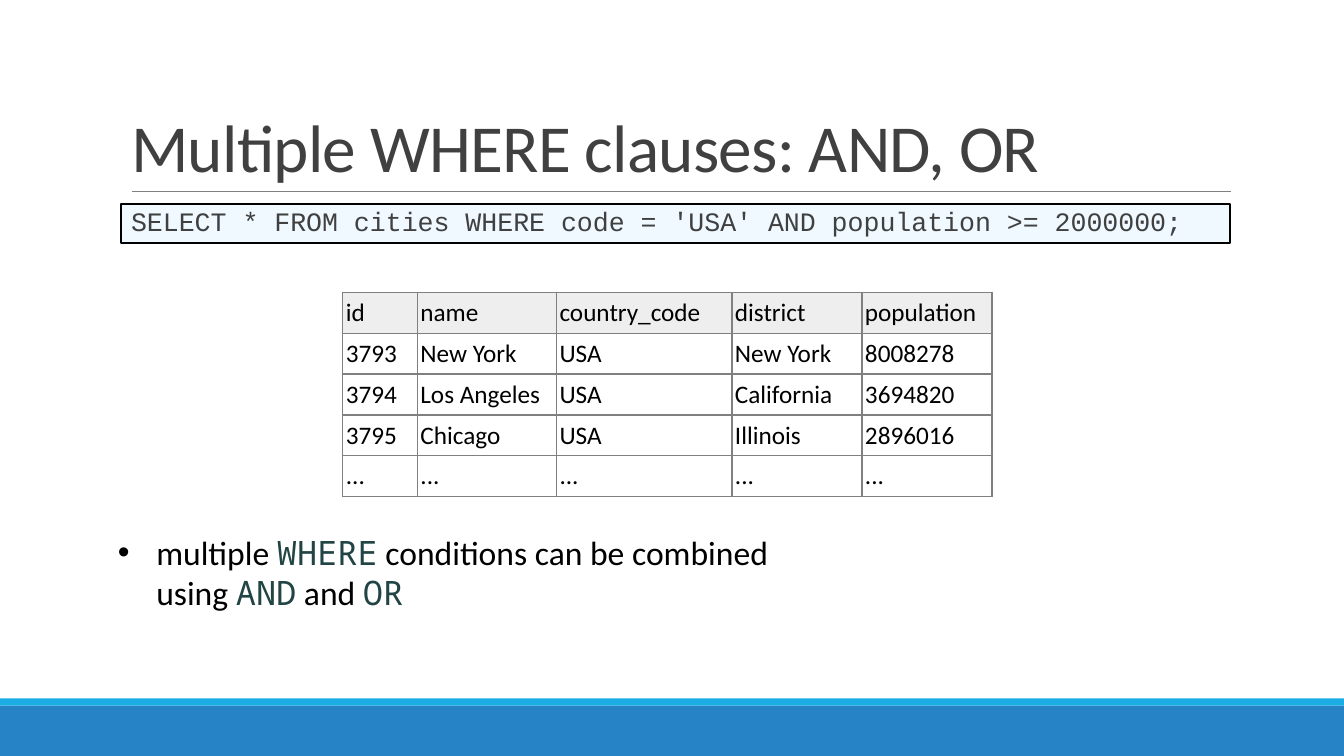
import pptx
import pptx.dml.color
import pptx.enum.shapes
import pptx.enum.text
import pptx.oxml
import pptx.oxml.ns
import pptx.util

PX = 9144  # EMU in one px, 100 px to the inch
ANCHOR = pptx.enum.text.MSO_ANCHOR

COLORS = {
    "band": "2683C6", "stripe": "1CADE4", "rule": "808080",
    "title": "404040", "code_fill": "EFF9FF", "black": "000000",
    "header": "EEEEEE", "white": "FFFFFF", "keyword": "224444",
}

CITIES = [
    ["id", "name", "country_code", "district", "population"],
    ["3793", "New York", "USA", "New York", "8008278"],
    ["3794", "Los Angeles", "USA", "California", "3694820"],
    ["3795", "Chicago", "USA", "Illinois", "2896016"],
    ["..."] * 5,
]
COLUMN_WIDTHS = [74, 138, 174, 129, 129]
ROW_HEIGHT = 40


def px(length):
    return pptx.util.Emu(length * PX)


def rgb(name):
    return pptx.dml.color.RGBColor.from_string(COLORS[name])


def paint(item, color):
    item.fill.solid()
    item.fill.fore_color.rgb = rgb(color)


def add_xml(parent, xml):
    declared = xml.replace(" ", f" {pptx.oxml.ns.nsdecls('a')} ", 1)
    parent.append(pptx.oxml.parse_xml(declared))


def add_span(para, text, *, size, font="Calibri", color="black", spacing=None):
    span = para.add_run()
    span.text = text
    span.font.size = pptx.util.Pt(size)
    span.font.name = font
    span.font.color.rgb = rgb(color)
    if spacing is not None:
        span.font._element.set("spc", str(round(spacing * 100)))


def set_margins(item, left, top, right, bottom):
    item.margin_left, item.margin_top = px(left), px(top)
    item.margin_right, item.margin_bottom = px(right), px(bottom)


def place_text(box, at, margins, anchor, line_spacing):
    """Move a placeholder, set up its frame and return its paragraph."""
    box.left, box.top, box.width, box.height = map(px, at)
    frame = box.text_frame
    frame.word_wrap = True
    frame.auto_size = pptx.enum.text.MSO_AUTO_SIZE.NONE
    frame.vertical_anchor = anchor
    set_margins(frame, *margins)
    para = frame.paragraphs[0]
    para.alignment = pptx.enum.text.PP_ALIGN.LEFT
    para.line_spacing = line_spacing
    para.space_before = pptx.util.Pt(0)
    return para


def set_bullet(para, margin, indent, mark):
    props = para._p.get_or_add_pPr()
    props.set("marL", str(margin * PX))
    props.set("indent", str(indent * PX))
    add_xml(props, f'<a:buChar char="{mark}"/>' if mark else "<a:buNone />")


def add_bar(page, at, color):
    bar = page.shapes.add_shape(
        pptx.enum.shapes.MSO_SHAPE.RECTANGLE, *map(px, at))
    bar.shadow.inherit = False
    paint(bar, color)
    bar.line.fill.background()


def add_rule(page, left, right, top):
    rule = page.shapes.add_connector(
        pptx.enum.shapes.MSO_CONNECTOR.STRAIGHT,
        px(left), px(top), px(right), px(top))
    rule.line.color.rgb = rgb("rule")
    rule.line.width = pptx.util.Pt(0.5)
    add_xml(rule._element.spPr, "<a:effectLst />")


def add_borders(cell):
    props = cell._tc.get_or_add_tcPr()
    for side in "LRTB":
        add_xml(props, f'<a:ln{side} w="12700"><a:solidFill><a:srgbClr '
                       f'val="{COLORS["rule"]}"/></a:solidFill></a:ln{side}>')


def add_grid(page, left, top, rows):
    table = page.shapes.add_table(
        len(rows), len(COLUMN_WIDTHS), px(left), px(top),
        px(sum(COLUMN_WIDTHS)), px(ROW_HEIGHT * len(rows))).table
    table.first_row = table.horz_banding = False
    for column, width in zip(table.columns, COLUMN_WIDTHS):
        column.width = px(width)
    for row, values in enumerate(rows):
        for column, value in enumerate(values):
            cell = table.cell(row, column)
            set_margins(cell, 3, 5, 3, 5)
            cell.vertical_anchor = ANCHOR.MIDDLE
            add_borders(cell)
            paint(cell, "white" if row else "header")
            add_span(cell.text_frame.paragraphs[0], value, size=18)


def main():
    deck = pptx.Presentation()
    deck.slide_width, deck.slide_height = px(1333), px(750)
    page = deck.slides.add_slide(deck.slide_layouts[3])
    title, code, notes = page.placeholders

    # Footer bars and the rule under the title
    add_bar(page, (0, 700, 1333, 50), "band")
    add_bar(page, (0, 693, 1333, 7), "stripe")
    add_rule(page, 131, 1221, 190)

    # Title
    para = place_text(title, (120, 31, 1100, 159), (10, 5, 10, 5),
                      ANCHOR.BOTTOM, 0.85)
    add_span(para, "Multiple WHERE clauses: AND, OR", size=48,
             color="title", spacing=-0.5)

    # Query
    para = place_text(code, (120, 202, 1100, 39), (0, 5, 0, 5),
                      ANCHOR.TOP, 0.9)
    paint(code, "code_fill")
    code.line.color.rgb = rgb("black")
    code.line.width = pptx.util.Pt(1.5)
    set_bullet(para, 10, 0, None)
    add_span(para, "SELECT * FROM cities WHERE code = 'USA' "
                   "AND population >= 2000000;",
             size=19, font="Courier New", color="title")

    # Query result
    add_grid(page, 340, 290, CITIES)

    # Explanation, with SQL keywords in a monospaced font
    para = place_text(notes, (108, 507, 898, 134), (9, 0, 215, 13),
                      ANCHOR.MIDDLE, 1.0)
    paint(notes, "white")
    set_bullet(para, 38, -38, "•")
    keyword = {"font": "Noto Sans Mono", "color": "keyword"}
    for text, style in [
        ("multiple ", {}), ("WHERE", keyword),
        (" conditions can be combined using ", {}), ("AND", keyword),
        (" and ", {}), ("OR", keyword),
    ]:
        add_span(para, text, size=24, **style)

    deck.save("out.pptx")


if __name__ == "__main__":
    main()
